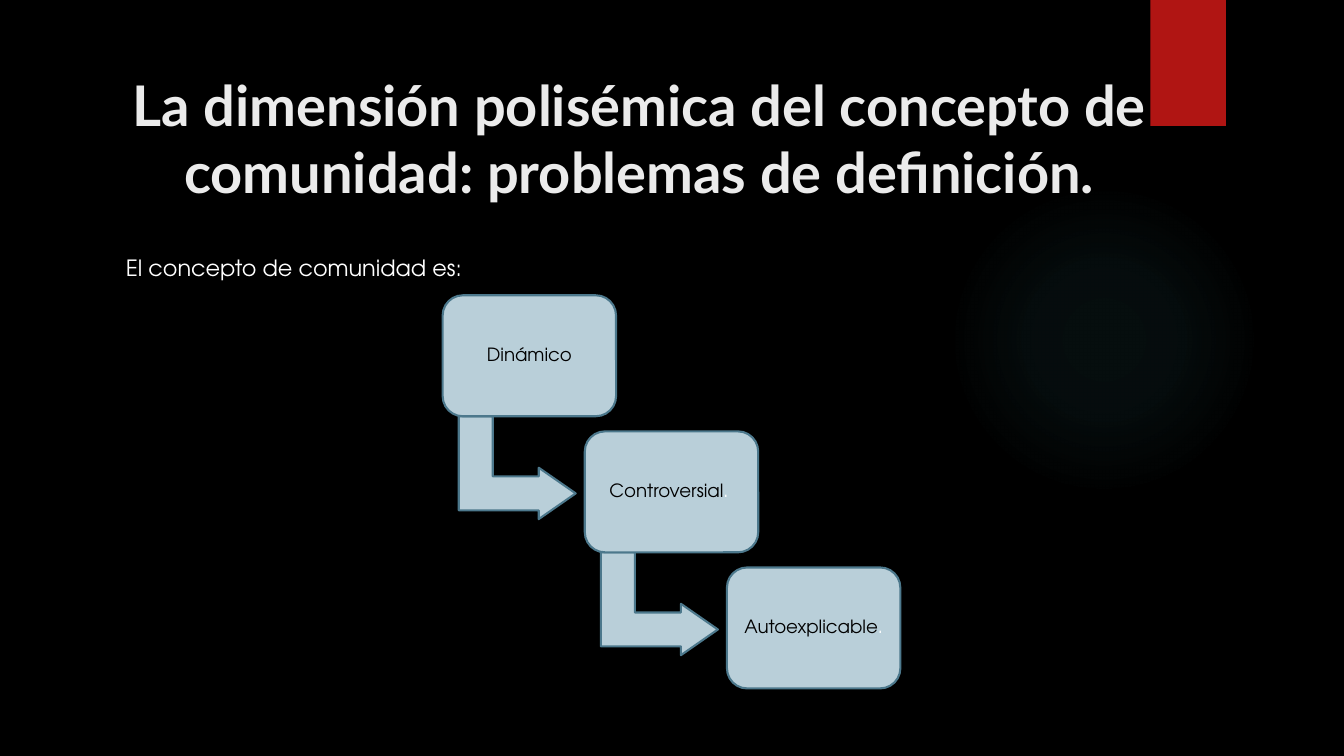
from lxml.etree import SubElement
from pptx import Presentation
from pptx.dml.color import RGBColor
from pptx.enum.shapes import MSO_SHAPE
from pptx.enum.text import MSO_ANCHOR, PP_ALIGN
from pptx.oxml.ns import qn
from pptx.util import Emu, Pt

PX = 9144  # EMU per px, 100 px to the inch
COLORS = {
    "black": "000000", "white": "FFFFFF", "title": "EBEBEB", "ribbon": "B01513",
    "glow": "50B9C1", "step": "B9CFD9", "outline": "4C788C",
}
BODY_FONT = "TeX Gyre Adventor"

# Staircase of steps: first corner, offset to the next, box size
STEPS = [("Dinámico", ""), ("Controversial", ". "), ("Autoexplicable", ".")]
STEP_LEFT, STEP_TOP = 439, 293
STEP_DX, STEP_DY = 141, 135
STEP_WIDTH, STEP_HEIGHT = 172, 120


def color(name):
    return RGBColor.from_string(COLORS[name])


def px(*lengths):
    return [Emu(length * PX) for length in lengths]


def write(shape, *spans, font=BODY_FONT, size=16, bold=False, align=PP_ALIGN.LEFT,
          anchor=MSO_ANCHOR.TOP, spacing=0.9, inset=(10, 5)):
    """Fill a shape with one paragraph made of (text, colour) spans."""
    frame = shape.text_frame
    frame.word_wrap = True
    frame.vertical_anchor = anchor
    frame.margin_left = frame.margin_right = Emu(inset[0] * PX)
    frame.margin_top = frame.margin_bottom = Emu(inset[1] * PX)
    para = frame.paragraphs[0]
    para.alignment = align
    para.line_spacing = spacing
    para.space_before = Pt(0)
    for text, tone in spans:
        if text:
            span = para.add_run()
            span.text = text
            span.font.name = font
            span.font.size = Pt(size)
            span.font.bold = bold
            span.font.color.rgb = color(tone)


def add_block(page, kind, left, top, width, height, fill, line=None):
    block = page.shapes.add_shape(kind, *px(left, top, width, height))
    block.shadow.inherit = False
    block.fill.solid()
    block.fill.fore_color.rgb = color(fill)
    if line:
        block.line.color.rgb = color(line)
        block.line.width = Pt(1.5)
    else:
        block.line.fill.background()
    return block


def add_glow(page, left, top, size):
    """Circle whose colour fades out from the centre."""
    glow = add_block(page, MSO_SHAPE.OVAL, left, top, size, size, "glow")
    solid = glow.fill._xPr.find(qn("a:solidFill"))
    gradient = solid.makeelement(qn("a:gradFill"), {"rotWithShape": "1"})
    solid.getparent().replace(solid, gradient)
    stops = SubElement(gradient, qn("a:gsLst"))
    for position, opacity in [(0, 7), (36, 6), (69, 0)]:
        stop = SubElement(stops, qn("a:gs"), pos=str(position * 1000))
        tone = SubElement(stop, qn("a:srgbClr"), val=COLORS["glow"])
        SubElement(tone, qn("a:alpha"), val=str(opacity * 1000))
    circle = SubElement(gradient, qn("a:path"), path="circle")
    SubElement(circle, qn("a:fillToRect"), l="50000", t="50000", r="50000", b="50000")


def add_arrow(page, left, top):
    arrow = add_block(page, MSO_SHAPE.BENT_UP_ARROW, left, top, 102, 116,
                      "step", "outline")
    arrow.rotation = 90
    for index, value in enumerate([0.33, 0.25, 0.36]):
        arrow.adjustments[index] = value


def add_step(page, left, top, label, ending):
    box = add_block(page, MSO_SHAPE.ROUNDED_RECTANGLE, left, top,
                    STEP_WIDTH, STEP_HEIGHT, "step", "outline")
    write(box, (label, "black"), (ending, "white"), size=13,
          align=PP_ALIGN.CENTER, anchor=MSO_ANCHOR.MIDDLE, inset=(5, 5))


def main():
    deck = Presentation()
    deck.slide_width, deck.slide_height = px(1333, 750)
    page = deck.slides.add_slide(deck.slide_layouts[5])
    page.background.fill.solid()
    page.background.fill.fore_color.rgb = color("black")

    # Decoration
    add_glow(page, 941, 183, 308)
    add_block(page, MSO_SHAPE.RECTANGLE, 1141, 0, 75, 125, "ribbon")

    # Title, in front of the decoration
    title = page.shapes.title
    title.left, title.top, title.width, title.height = px(84, 60, 1100, 153)
    write(title, ("La dimensión polisémica del concepto de comunidad: "
                  "problemas de definición.", "title"),
          font="Lato", size=40, bold=True, align=PP_ALIGN.CENTER,
          anchor=MSO_ANCHOR.MIDDLE, spacing=1.0)
    page.shapes._spTree.append(title._element)

    # Lead-in
    lead = page.shapes.add_textbox(*px(115, 250, 441, 36))
    write(lead, ("El concepto de comunidad es:", "white"))

    # Steps, each but the last with an arrow to the next
    for index, (label, ending) in enumerate(STEPS):
        left = STEP_LEFT + index * STEP_DX
        top = STEP_TOP + index * STEP_DY
        if index < len(STEPS) - 1:
            add_arrow(page, left + 23, top + 113)
        add_step(page, left, top, label, ending)

    deck.save("out.pptx")


if __name__ == "__main__":
    main()
